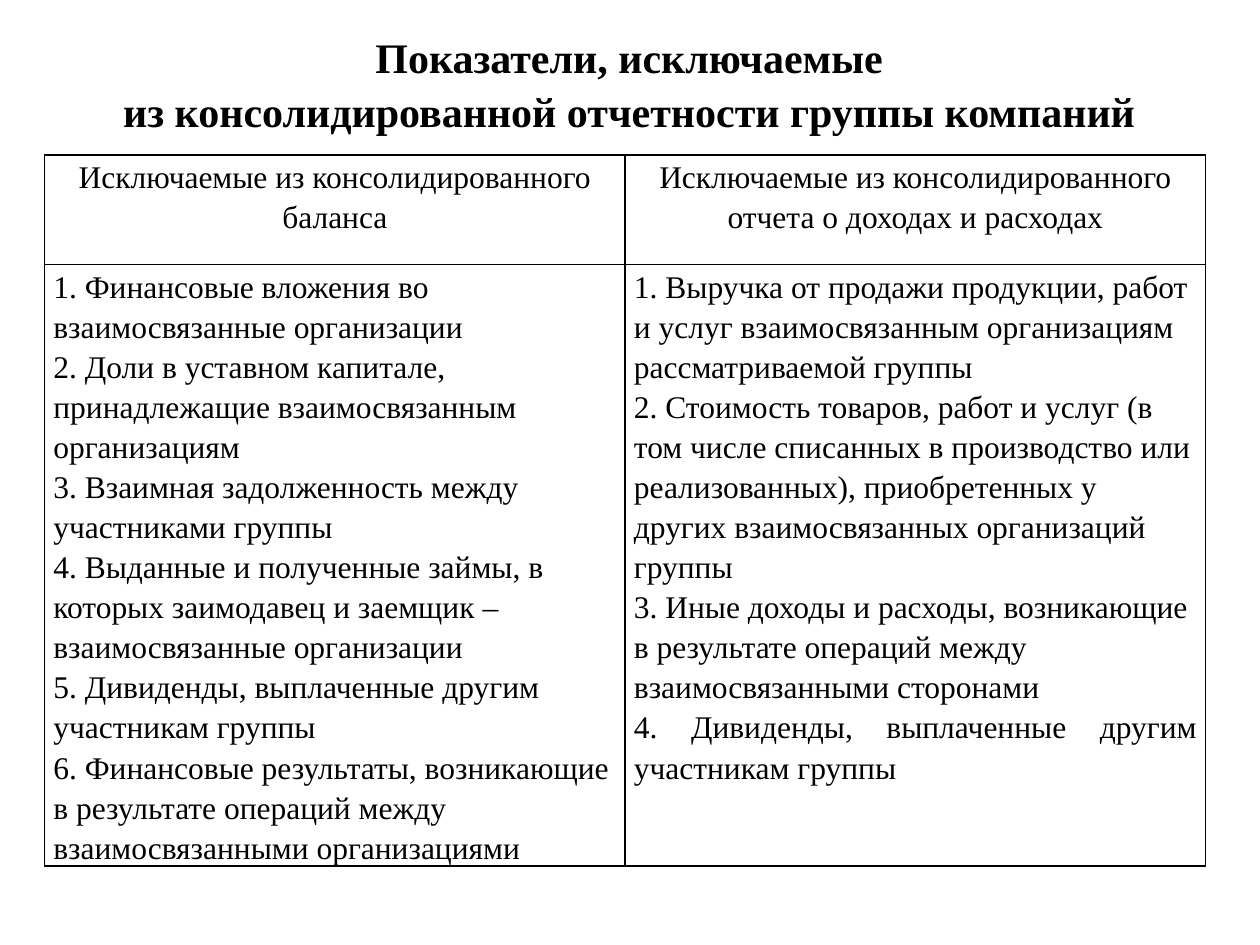
import pptx
import pptx.util
import pptx.dml.color
import pptx.enum.text
import pptx.oxml
import pptx.oxml.ns

Pt = pptx.util.Pt
ALIGN = pptx.enum.text.PP_ALIGN
ANCHOR = pptx.enum.text.MSO_ANCHOR
BLACK = pptx.dml.color.RGBColor(0, 0, 0)

TITLE = [
    "Показатели, исключаемые",
    "из консолидированной отчетности группы компаний",
]
HEADS = [
    "Исключаемые из консолидированного баланса",
    "Исключаемые из консолидированного отчета о доходах и расходах",
]
LISTS = [
    [
        "1. Финансовые вложения во взаимосвязанные организации",
        "2. Доли в уставном капитале, принадлежащие взаимосвязанным организациям",
        "3. Взаимная задолженность между участниками группы",
        "4. Выданные и полученные займы, в которых заимодавец и заемщик – взаимосвязанные организации",
        "5. Дивиденды, выплаченные другим участникам группы",
        "6. Финансовые результаты, возникающие в результате операций между взаимосвязанными организациями",
    ],
    [
        "1. Выручка от продажи продукции, работ и услуг взаимосвязанным организациям рассматриваемой группы",
        "2. Стоимость товаров, работ и услуг (в том числе списанных в производство или реализованных), приобретенных у других взаимосвязанных организаций группы",
        "3. Иные доходы и расходы, возникающие в результате операций между взаимосвязанными сторонами",
        "4. Дивиденды, выплаченные другим участникам группы",
    ],
]


class Deck:
    face = "Times New Roman"
    ink = BLACK

    def __init__(self, wide, high):
        self.show = pptx.Presentation()
        self.show.slide_width = Pt(wide)
        self.show.slide_height = Pt(high)
        self.slide = self.show.slides.add_slide(self.show.slide_layouts[5])

    def text(self, frame, lines, size, bold, align, space):
        frame.text = "\n".join(lines)
        for para in frame.paragraphs:
            para.alignment = align
            para.line_spacing = space
            for run in para.runs:
                run.font.name = self.face
                run.font.size = Pt(size)
                run.font.bold = bold
                run.font.color.rgb = self.ink

    def title(self, lines, left, top, wide, high):
        box = self.slide.shapes.title
        box.left, box.top, box.width, box.height = map(Pt, (left, top, wide, high))
        frame = box.text_frame
        frame.word_wrap = True
        frame.auto_size = pptx.enum.text.MSO_AUTO_SIZE.NONE
        frame.vertical_anchor = ANCHOR.MIDDLE
        self.text(frame, lines, 24, True, ALIGN.CENTER, 1.07)

    def border(self, cell):
        props = cell._tc.get_or_add_tcPr()
        for spot, side in enumerate("LRTB"):
            line = pptx.oxml.parse_xml(
                f'<a:ln{side} {pptx.oxml.ns.nsdecls("a")} w="{Pt(1)}">'
                f'<a:solidFill><a:srgbClr val="{self.ink}"/></a:solidFill></a:ln{side}>'
            )
            props.insert(spot, line)

    def table(self, heads, lists, left, top, wide, rows):
        grid = self.slide.shapes.add_table(
            len(rows), len(heads), Pt(left), Pt(top), Pt(wide), Pt(sum(rows))
        ).table
        grid.first_row = grid.horz_banding = False
        for row, high in zip(grid.rows, rows):
            row.height = Pt(high)
        for col, (head, items) in enumerate(zip(heads, lists)):
            self.fill(grid.cell(0, col), [head], ALIGN.CENTER)
            self.fill(grid.cell(1, col), items, ALIGN.LEFT)
        return grid

    def fill(self, cell, lines, align):
        cell.fill.background()
        cell.margin_left = cell.margin_right = Pt(5)
        cell.margin_top = cell.margin_bottom = 0
        cell.vertical_anchor = ANCHOR.TOP
        self.text(cell.text_frame, lines, 18, False, align, 1.15)
        self.border(cell)


def main():
    deck = Deck(720, 540)
    deck.title(TITLE, 60, 14, 599, 65.5)
    grid = deck.table(HEADS, LISTS, 25.5, 88.5, 663.5, [62.8, 343])
    grid.cell(1, 1).text_frame.paragraphs[-1].alignment = ALIGN.JUSTIFY
    deck.show.save("out.pptx")


if __name__ == "__main__":
    main()
